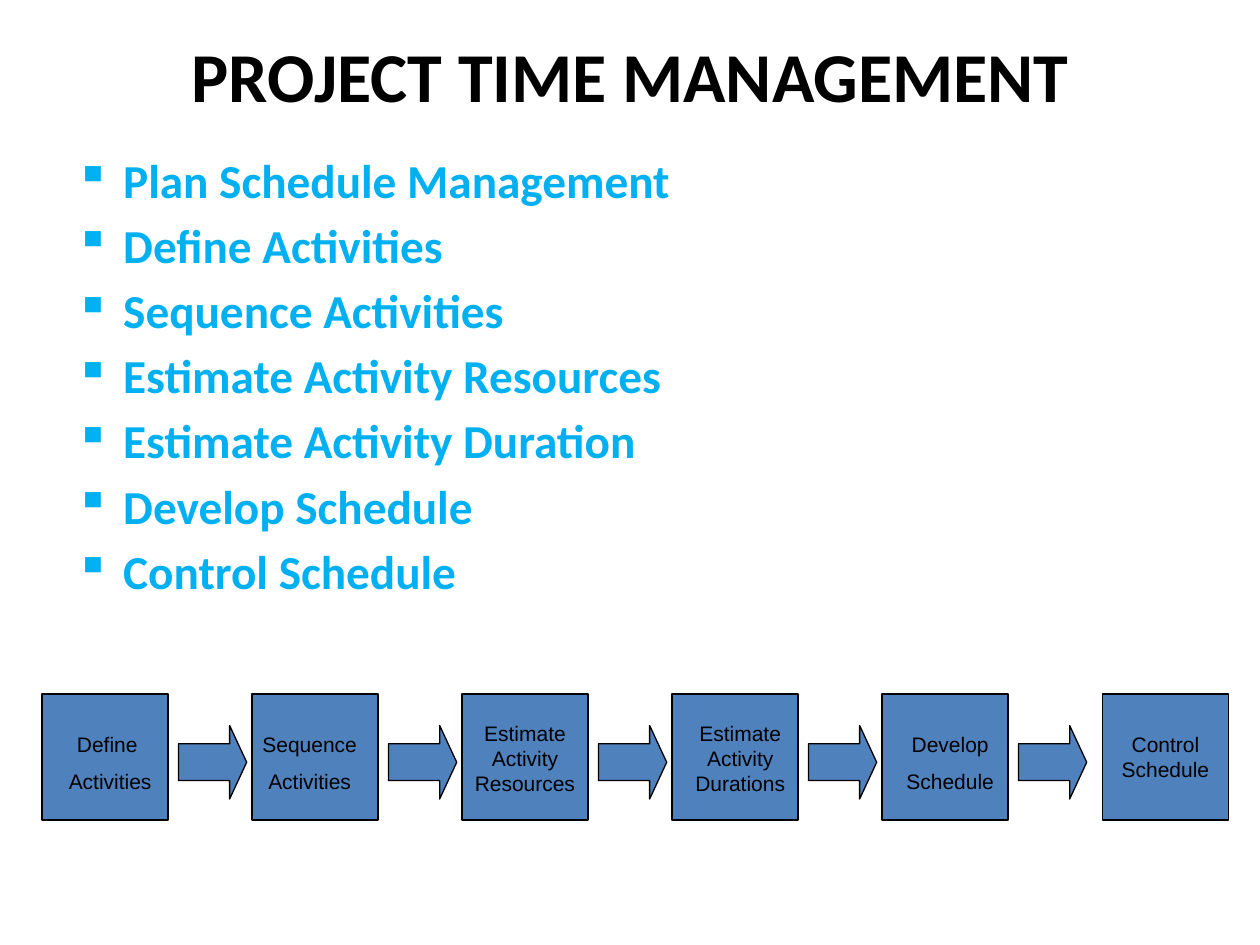
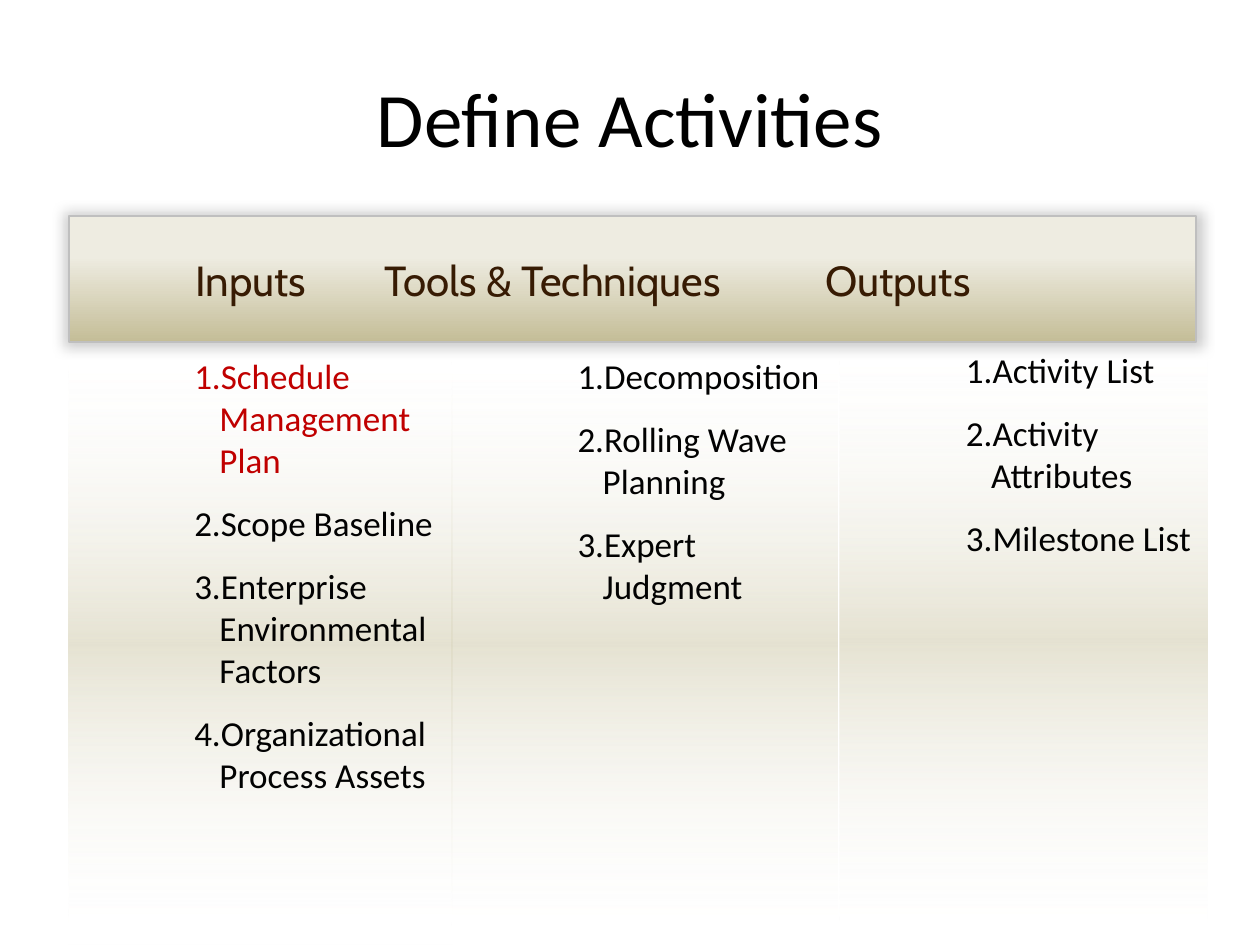
from lxml import etree
from pptx import Presentation
from pptx import util as u
from pptx.dml.color import RGBColor
from pptx.enum import shapes, text
from pptx.oxml.ns import qn

# Square grid cells: 12 columns by 9 rows fill the slide.
WIDTH, HEIGHT = u.Inches(10), u.Inches(7.5)
CELL = WIDTH / 12

COLORS = {
    "black": "000000",
    "body": "020202",
    "sky": "00B0F0",
    "step": "4F81BD",
    "alert": "C00000",
    "white": "FFFFFF",
    "sand": "DDD9C3",
    "cream": "EEECE1",
    "khaki": "C4BD97",
    "edge": "BFBFBF",
    "brown": "371B03",
}
PANEL_STOPS = [(0, "white", 0), (50, "sand", 75), (100, "white", 0)]
HEADER_STOPS = [(32, "cream", 100), (100, "khaki", 100)]

PROCESSES = ["Plan Schedule Management", "Define Activities", "Sequence Activities",
             "Estimate Activity Resources", "Estimate Activity Duration",
             "Develop Schedule", "Control Schedule"]

# Label lines, then the label's left, top and width in cells.
STEPS = [
    (["Define ", "Activities"], 0.2, 6.91, 1.7),
    (["Sequence", "Activities"], 2.1, 6.91, 1.7),
    (["Estimate Activity Resources"], 4.3, 6.8, 1.4),
    (["Estimate Activity Durations"], 6.3, 6.8, 1.5),
    (["Develop", "Schedule"], 8.2, 6.91, 1.7),
    (["Control Schedule"], 10.4, 6.91, 1.4),
]
STEP_PITCH = 2
LAST_STEP_SHIFT = 0.1

INPUTS = ["Schedule Management Plan", "Scope Baseline",
          "Enterprise Environmental Factors", "Organizational Process Assets"]
TOOLS = ["Decomposition", "Rolling Wave Planning", "Expert Judgment"]
OUTPUTS = ["Activity List", "Activity Attributes", "Milestone List"]


def rgb(name):
    return RGBColor.from_string(COLORS[name])


def on_grid(*cells):
    return [u.Emu(round(cell * CELL)) for cell in cells]


def write(frame, lines, size, color, font="Calibri", bold=False,
          align=text.PP_ALIGN.LEFT, before=0, after=0):
    frame.word_wrap = True
    frame.text = "\n".join(lines)
    for paragraph in frame.paragraphs:
        paragraph.alignment = align
        paragraph.space_before, paragraph.space_after = u.Pt(before), u.Pt(after)
        for run in paragraph.runs:
            run.font.size, run.font.name, run.font.bold = u.Pt(size), font, bold
            run.font.color.rgb = rgb(color)


def add_text(slide, box, lines, size, color, **style):
    frame = slide.shapes.add_textbox(*on_grid(*box)).text_frame
    write(frame, lines, size, color, **style)
    return frame


def add_title(slide, title, top, height, size, bold=False):
    frame = add_text(slide, (0.6, top, 10.8, height), [title], size, "black",
                     bold=bold, align=text.PP_ALIGN.CENTER)
    frame.vertical_anchor = text.MSO_ANCHOR.MIDDLE


def add_list_marks(frame, indent, tag, **attributes):
    """Give every paragraph a hanging indent and a bullet or number."""
    for paragraph in frame.paragraphs:
        properties = paragraph._p.get_or_add_pPr()
        properties.set("marL", str(u.Inches(indent)))
        properties.set("indent", str(-u.Inches(indent)))
        etree.SubElement(properties, qn(tag), **attributes)


def add_shape(slide, kind, box, fill=None, line=None, line_width=0.75):
    shape = slide.shapes.add_shape(kind, *on_grid(*box))
    shape.shadow.inherit = False
    if fill:
        shape.fill.solid()
        shape.fill.fore_color.rgb = rgb(fill)
    if line:
        shape.line.color.rgb = rgb(line)
        shape.line.width = u.Pt(line_width)
    else:
        shape.line.fill.background()
    return shape


def add_color(parent, name, opacity):
    color = etree.SubElement(parent, qn("a:srgbClr"), val=COLORS[name])
    etree.SubElement(color, qn("a:alpha"), val=str(opacity * 1000))


def add_gradient_box(slide, box, stops, top_inset, **outline):
    shape = add_shape(slide, shapes.MSO_SHAPE.RECTANGLE, box, **outline)
    shape.fill.gradient()
    shape.fill.gradient_angle = 270
    stop_list = shape._element.spPr.find(qn("a:gradFill")).find(qn("a:gsLst"))
    for stop in list(stop_list):
        stop_list.remove(stop)
    for position, name, opacity in stops:
        stop = etree.SubElement(stop_list, qn("a:gs"), pos=str(position * 1000))
        add_color(stop, name, opacity)
    frame = shape.text_frame
    frame.margin_left, frame.margin_right = u.Inches(1), u.Inches(0.1)
    frame.margin_top, frame.margin_bottom = u.Inches(top_inset), u.Inches(0.05)
    return shape


def add_panel(slide, box, items, **spacing):
    frame = add_gradient_box(slide, box, PANEL_STOPS, 0.1).text_frame
    frame.vertical_anchor = text.MSO_ANCHOR.TOP
    write(frame, items, 20, "body", **spacing)
    add_list_marks(frame, 0.2, "a:buAutoNum", type="arabicPeriod")
    return frame


def add_header(slide, box, heading):
    shape = add_gradient_box(slide, box, HEADER_STOPS, 0.05, line="edge", line_width=1)
    effects = shape._element.spPr.find(qn("a:effectLst"))
    shadow = etree.SubElement(effects, qn("a:outerShdw"), blurRad=str(u.Inches(0.1)),
                              dist="0", dir="0", sx="101000", sy="106000", algn="ctr")
    add_color(shadow, "black", 20)
    shape.text_frame.vertical_anchor = text.MSO_ANCHOR.MIDDLE
    write(shape.text_frame, [heading], 24, "brown", font="Cabin")


def add_step_flow(slide):
    last = len(STEPS) - 1
    for index, (lines, left, top, width) in enumerate(STEPS):
        start = index * STEP_PITCH
        shift = LAST_STEP_SHIFT if index == last else 0
        add_shape(slide, shapes.MSO_SHAPE.RECTANGLE,
                  (0.4 + start + shift, 6.61, 1.2, 1.2), "step", "black")
        if index < last:
            arrow = add_shape(slide, shapes.MSO_SHAPE.RIGHT_ARROW,
                              (1.7 + start, 6.91, 0.65, 0.7), "step", "black")
            arrow.adjustments[0], arrow.adjustments[1] = 0.5, 0.25
        add_text(slide, (left, top, width, 0.73), lines, 12, "black", font="Arial",
                 align=text.PP_ALIGN.CENTER, before=6.8)


def build_overview(slide):
    frame = add_text(slide, (0.6, 1.38, 10.8, 5), PROCESSES, 27, "sky",
                     bold=True, before=4.8)
    add_list_marks(frame, 0.38, "a:buChar", char="▪")
    add_title(slide, "PROJECT TIME MANAGEMENT", 0.25, 0.92, 40, bold=True)
    add_step_flow(slide)


def build_define_activities(slide):
    add_title(slide, "Define Activities", 0.36, 1.5, 44)
    add_panel(slide, (8, 3.2, 3.5, 5.8), OUTPUTS, before=12)
    add_panel(slide, (4.3, 3.26, 3.68, 5.74), TOOLS, after=12)
    inputs = add_panel(slide, (0.65, 3.26, 3.66, 5.74), INPUTS, after=12)
    inputs.paragraphs[0].runs[0].font.color.rgb = rgb("alert")
    add_header(slide, (0.66, 2.06, 10.73, 1.2),
               "Inputs\t\tTools & Techniques \t\tOutputs")


def main():
    presentation = Presentation()
    presentation.slide_width, presentation.slide_height = WIDTH, HEIGHT
    blank = presentation.slide_layouts[6]
    for build in (build_overview, build_define_activities):
        build(presentation.slides.add_slide(blank))
    presentation.save("out.pptx")


if __name__ == "__main__":
    main()
